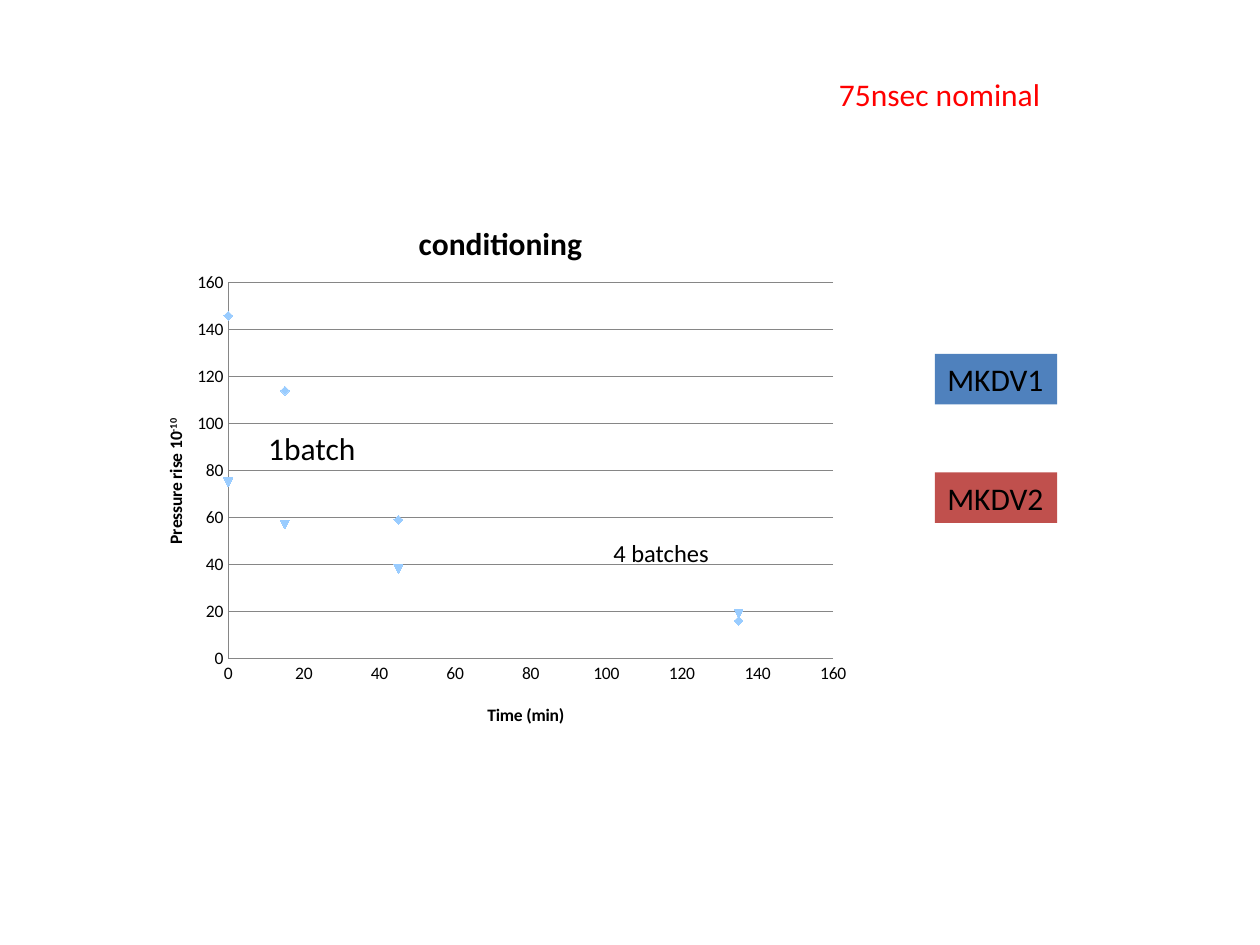
from lxml.etree import SubElement
from pptx import Presentation
from pptx.chart.data import XyChartData
from pptx.dml.color import RGBColor
from pptx.enum.chart import XL_CHART_TYPE as ChartType, XL_TICK_MARK as TickMark
from pptx.enum.shapes import MSO_SHAPE as Shape
from pptx.enum.text import MSO_ANCHOR as Anchor, MSO_AUTO_SIZE as AutoSize, PP_ALIGN as Align
from pptx.oxml import parse_xml
from pptx.oxml.ns import nsdecls, qn
from pptx.util import Inches, Pt

FONT = "Calibri"
COLORS = {"text": "000000", "headline": "FF0000", "MKDV1": "4F81BD",
          "MKDV2": "C0504D", "grid": "868686"}
COLUMNS, ROWS = 100, 75
CELL = Inches(0.1)
TIMES = (0, 15, 45, 135)
PRESSURES = {"Series 1": (146, 114, 59, 16), "Series 2": (75, 57, 38, 19)}


def cells(*lengths):
    return [round(length * CELL) for length in lengths]


def rgb(name):
    return RGBColor.from_string(COLORS[name])


def style_font(font, size, bold=False, color="text"):
    font.name, font.size, font.bold = FONT, Pt(size), bold
    font.color.rgb = rgb(color)


def add_label(slide, box, text, size=18, color="text", fill=None):
    if fill:
        label = slide.shapes.add_shape(Shape.RECTANGLE, *cells(*box))
        label.shadow.inherit = False
        label.fill.solid()
        label.fill.fore_color.rgb = rgb(fill)
        label.line.fill.background()
    else:
        label = slide.shapes.add_textbox(*cells(*box))
    frame = label.text_frame
    frame.word_wrap = False
    frame.auto_size = AutoSize.SHAPE_TO_FIT_TEXT
    frame.vertical_anchor = Anchor.TOP
    paragraph = frame.paragraphs[0]
    paragraph.alignment = Align.LEFT
    run = paragraph.add_run()
    run.text = text
    style_font(run.font, size, color=color)


def make_layout(**percents):
    layout = parse_xml(f"<c:layout {nsdecls('c')}/>")
    manual = SubElement(layout, qn("c:manualLayout"))
    settings = {"xMode": "edge", "yMode": "edge"}
    if "w" in percents:
        settings = {"layoutTarget": "inner", **settings}
    settings.update({key: f"{value / 100:.3f}" for key, value in percents.items()})
    for tag, value in settings.items():
        SubElement(manual, qn(f"c:{tag}")).set("val", value)
    return layout


def drop_layout(element):
    for layout in element.findall(qn("c:layout")):
        element.remove(layout)


def set_title(owner, text, size, x, y, superscript=""):
    owner.has_title = True
    title = owner.chart_title if hasattr(owner, "chart_title") else owner.axis_title
    paragraph = title.text_frame.paragraphs[0]
    for part in filter(None, (text, superscript)):
        run = paragraph.add_run()
        run.text = part
        style_font(run.font, size, bold=True)
    if superscript:
        run.font._element.set("baseline", "30000")
    drop_layout(title._element)
    title._element.find(qn("c:tx")).addnext(make_layout(x=x, y=y))


def add_conditioning(slide, box):
    left, top = box[:2]
    data = XyChartData()
    for name, pressures in PRESSURES.items():
        series = data.add_series(name)
        for time, pressure in zip(TIMES, pressures):
            series.add_data_point(time, pressure)
    chart = slide.shapes.add_chart(ChartType.XY_SCATTER, *cells(*box), data).chart
    chart.has_legend = False
    style_font(chart.font, 10)
    chart.plots[0].vary_by_categories = False
    for series in chart.plots[0].series:
        series.smooth = False
        series.format.line.fill.background()
    set_title(chart, "conditioning", 18, x=38.8, y=5.3)
    set_title(chart.category_axis, "Time (min)", 10, x=48.5, y=91.7)
    set_title(chart.value_axis, "Pressure rise 10", 10, x=4.3, y=40.7, superscript="-10")
    for axis in (chart.category_axis, chart.value_axis):
        axis.minimum_scale, axis.maximum_scale, axis.major_unit = 0, 160, 20
        axis.major_tick_mark = axis.minor_tick_mark = TickMark.NONE
        axis.has_major_gridlines = axis is chart.value_axis
        axis.format.line.color.rgb = rgb("grid")
    gridline = chart.value_axis.major_gridlines.format.line
    gridline.color.rgb = rgb("grid")
    plot_area = chart._chartSpace.chart.plotArea
    drop_layout(plot_area)
    plot_area.insert(0, make_layout(x=13.6, y=17.2, w=82.5, h=67))
    add_label(slide, (left + 37.5, top + 27.4, 9.7, 3.4), "4 batches", size=14)
    add_label(slide, (left + 10.1, top + 18.8, 9, 4), "1batch")


def add_key(slide, box):
    left, top, width, height = box
    for row, magnet in enumerate(("MKDV1", "MKDV2")):
        add_label(slide, (left, top + row * 9.4, width, height), magnet, fill=magnet)


def main():
    deck = Presentation()
    deck.slide_width, deck.slide_height = cells(COLUMNS, ROWS)
    slide = deck.slides.add_slide(deck.slide_layouts[6])
    add_conditioning(slide, (10.2, 14.8, 58.2, 44.5))
    add_key(slide, (74.2, 28.1, 9.7, 4))
    add_label(slide, (65.6, 5.5, 18.2, 4), "75nsec nominal", color="headline")
    deck.save("out.pptx")


if __name__ == "__main__":
    main()
